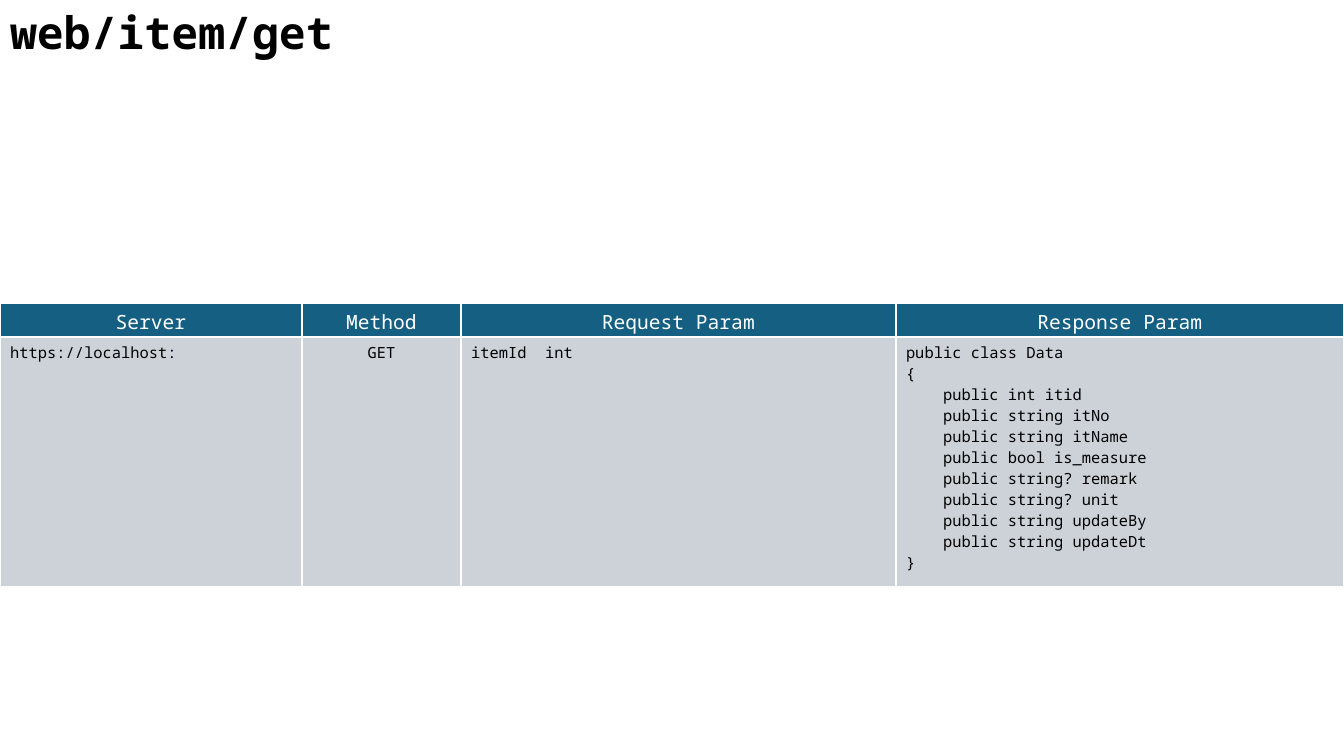
from lxml.etree import SubElement
from pptx import Presentation
from pptx.dml.color import RGBColor
from pptx.enum.text import MSO_ANCHOR, MSO_AUTO_SIZE, PP_ALIGN
from pptx.oxml.ns import qn
from pptx.util import Emu, Pt

FONT = "Noto Sans Mono"
BLACK = RGBColor(0x00, 0x00, 0x00)
WHITE = RGBColor(0xFF, 0xFF, 0xFF)
TEAL = RGBColor(0x15, 0x60, 0x82)
GRAY = RGBColor(0xCC, 0xD2, 0xD8)


def px(n):
    return Emu(round(n * 914400 / 100.8))


def fill_with_white_borders(cell, color):
    tcPr = cell._tc.get_or_add_tcPr()
    for side in ("lnL", "lnR", "lnT", "lnB"):
        ln = SubElement(tcPr, qn(f"a:{side}"), w=str(Pt(1)))
        solid = SubElement(ln, qn("a:solidFill"))
        SubElement(solid, qn("a:srgbClr"), val=str(WHITE))
    cell.fill.solid()
    cell.fill.fore_color.rgb = color


prs = Presentation()
prs.slide_width, prs.slide_height = px(1344), px(756)
s = prs.slides.add_slide(prs.slide_layouts[5])

title = s.shapes.title
title.left, title.top, title.width, title.height = px(0), px(0), px(953), px(65)
tf = title.text_frame
tf.text = "web/item/get"
tf.word_wrap = True
tf.auto_size = MSO_AUTO_SIZE.SHAPE_TO_FIT_TEXT
tf.vertical_anchor = MSO_ANCHOR.TOP
p = tf.paragraphs[0]
p.alignment = PP_ALIGN.LEFT
p.font.name, p.font.size, p.font.bold = FONT, Pt(32), True
p.font.color.rgb = BLACK

RESPONSE = """public class Data
{
    public int itid
    public string itNo
    public string itName
    public bool is_measure
    public string? remark
    public string? unit
    public string updateBy
    public string updateDt
}"""
COLUMNS = [
    (302, "Server", "https://localhost:", PP_ALIGN.LEFT),
    (159, "Method", "GET", PP_ALIGN.CENTER),
    (435, "Request Param", "itemId  int", PP_ALIGN.LEFT),
    (448, "Response Param", RESPONSE, PP_ALIGN.LEFT),
]

table = s.shapes.add_table(2, len(COLUMNS), px(0), px(303), px(1344), px(284)).table
table.rows[0].height, table.rows[1].height = px(34), px(250)

for col, (width, heading, body, body_align) in enumerate(COLUMNS):
    table.columns[col].width = px(width)
    rows = [
        (heading, PP_ALIGN.CENTER, 14, WHITE, TEAL),
        (body, body_align, 11, BLACK, GRAY),
    ]
    for row, (text, align, size, color, fill) in enumerate(rows):
        cell = table.cell(row, col)
        cell.text = text
        cell.margin_bottom = px(2)
        fill_with_white_borders(cell, fill)
        for p in cell.text_frame.paragraphs:
            p.alignment = align
            p.font.name, p.font.size, p.font.bold = FONT, Pt(size), False
            p.font.color.rgb = color

prs.save("out.pptx")
